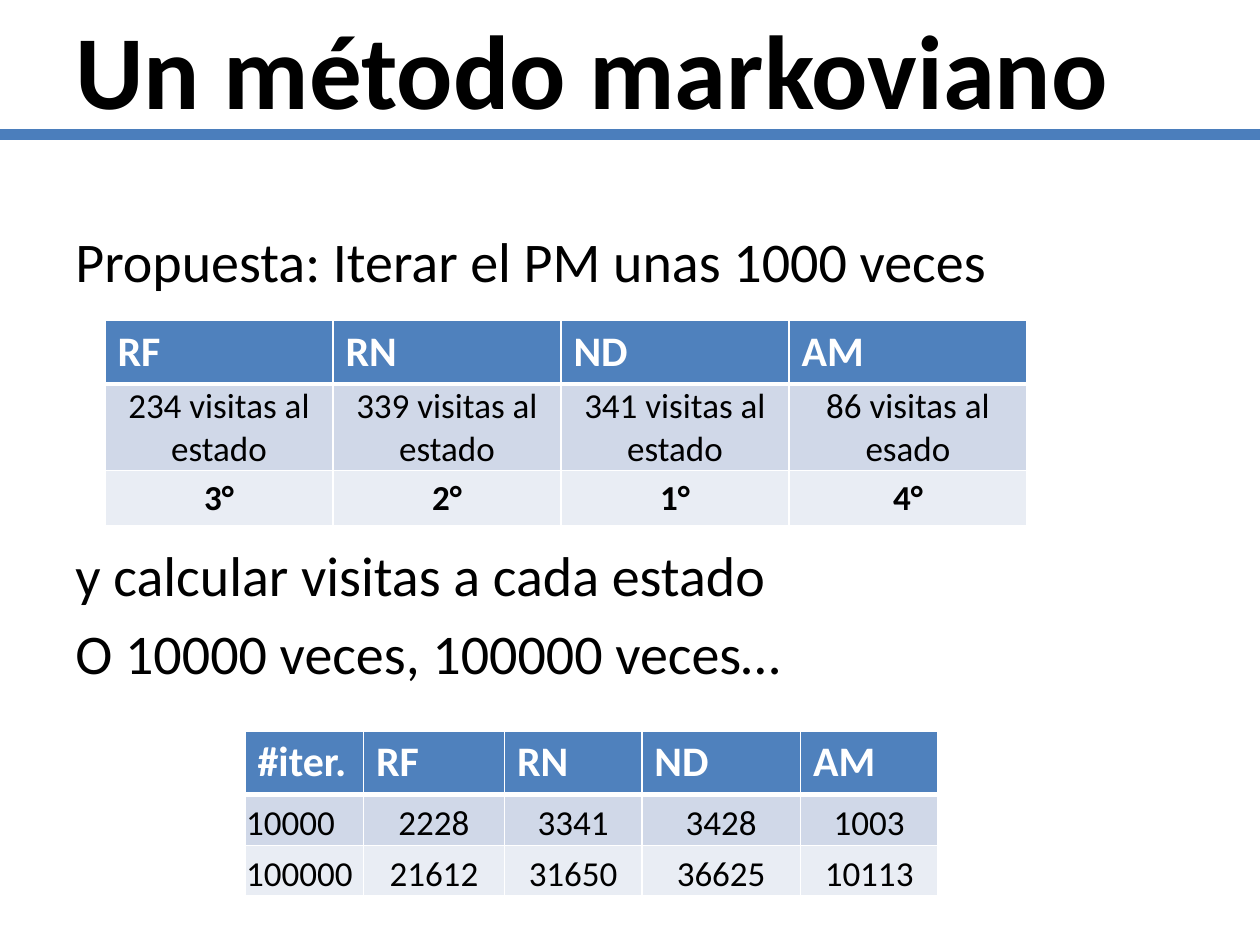
from lxml import etree
from pptx import Presentation
from pptx import util as u
from pptx.dml import color
from pptx.enum import shapes, text
from pptx.oxml import ns

Pt = u.Pt
LEFT, CENTER = text.PP_ALIGN.LEFT, text.PP_ALIGN.CENTER
TOP, MIDDLE, BOTTOM = text.MSO_ANCHOR.TOP, text.MSO_ANCHOR.MIDDLE, text.MSO_ANCHOR.BOTTOM
WIDE, TIGHT = (7.2, 3.6, 7.2, 3.6), (0.72, 0.72, 0.72, 0)


def rgb(code):
    return color.RGBColor.from_string(code)


def write(p, words, size=20, ink="000000", bold=False, align=LEFT, before=0):
    p.alignment = align
    p.space_before = Pt(before)
    r = p.add_run()
    r.text = words
    r.font.name = "Calibri"
    r.font.size = Pt(size)
    r.font.bold = bold
    r.font.color.rgb = rgb(ink)


def border(cell, bottom):
    """Draw white cell borders, 1 pt wide except for the bottom one."""
    pr = cell._tc.get_or_add_tcPr()
    for i, (side, width) in enumerate((("L", 1), ("R", 1), ("T", 1), ("B", bottom))):
        ln = etree.Element(ns.qn("a:ln" + side), w=str(Pt(width)))
        fill = etree.SubElement(ln, ns.qn("a:solidFill"))
        etree.SubElement(fill, ns.qn("a:srgbClr"), val="FFFFFF")
        pr.insert(i, ln)


class Deck:
    """Holds the table style and the current slide."""
    head, bands = "4F81BD", ("D0D8E8", "E9EDF4")

    def __init__(self, prs):
        self.s = prs.slides.add_slide(prs.slide_layouts[6])

    def line(self, x1, y1, x2, y2, ink, width):
        c = self.s.shapes.add_connector(
            shapes.MSO_CONNECTOR.STRAIGHT, Pt(x1), Pt(y1), Pt(x2), Pt(y2))
        c.line.color.rgb = rgb(ink)
        c.line.width = Pt(width)
        etree.SubElement(c._element.spPr, ns.qn("a:effectLst"))

    def text(self, x, y, w, h, paragraphs, anchor=TOP, **fmt):
        """Add a box of (words, space before) paragraphs."""
        tf = self.s.shapes.add_textbox(Pt(x), Pt(y), Pt(w), Pt(h)).text_frame
        tf.word_wrap = True
        tf.vertical_anchor = anchor
        for i, (words, before) in enumerate(paragraphs):
            p = tf.add_paragraph() if i else tf.paragraphs[0]
            write(p, words, before=before, **fmt)

    def cell(self, cell, words, fill, margins=WIDE, anchor=TOP, bottom=1, **fmt):
        cell.fill.solid()
        cell.fill.fore_color.rgb = rgb(fill)
        (cell.margin_left, cell.margin_top,
         cell.margin_right, cell.margin_bottom) = map(Pt, margins)
        cell.vertical_anchor = anchor
        border(cell, bottom)
        write(cell.text_frame.paragraphs[0], words, **fmt)

    def table(self, x, y, widths, heights, header, rows, labels=False, ranks=False):
        """Add a banded table; labels: first column to the left; ranks: bold last row."""
        t = self.s.shapes.add_table(len(heights), len(widths), Pt(x), Pt(y),
                                    Pt(sum(widths)), Pt(sum(heights))).table
        for col, w in zip(t.columns, widths):
            col.width = Pt(w)
        for row, h in zip(t.rows, heights):
            row.height = Pt(h)
        for j, words in enumerate(header):
            self.cell(t.cell(0, j), words, self.head, bottom=3,
                      size=24, ink="FFFFFF", bold=True)
        for i, row in enumerate(rows):
            rank = ranks and i == len(rows) - 1
            place = {} if rank else {"margins": TIGHT, "anchor": BOTTOM}
            for j, words in enumerate(row):
                self.cell(t.cell(i + 1, j), words, self.bands[i % 2], bold=rank,
                          align=LEFT if labels and j == 0 else CENTER, **place)


def main():
    prs = Presentation()
    prs.slide_width, prs.slide_height = Pt(720), Pt(540)
    deck = Deck(prs)
    states = ["RF", "RN", "ND", "AM"]

    deck.line(0, 77, 720, 77, "4B7EBC", 6)
    deck.text(36, 126, 648, 356, [
        ("Propuesta: Iterar el PM unas 1000 veces", 0),
        ("y calcular visitas a cada estado", 141),
        ("O 10000 veces, 100000 veces…", 6),
    ], size=32)
    deck.table(60, 183, [130.3] * 3 + [136], [36.5, 49.5, 31.5], states, [
        ["234 visitas al estado", "339 visitas al estado",
         "341 visitas al estado", "86 visitas al esado"],
        ["3°", "2°", "1°", "4°"],
    ], ranks=True)
    deck.text(36, 0, 648, 77, [("Un método markoviano", 0)],
              anchor=MIDDLE, size=60, bold=True)
    deck.table(140, 417.6, [67.7, 80.6, 78.5, 90.7, 78.5], [36.5, 29, 29],
               ["#iter."] + states, [
        ["10000", "2228", "3341", "3428", "1003"],
        ["100000", "21612", "31650", "36625", "10113"],
    ], labels=True)
    prs.save("out.pptx")


if __name__ == "__main__":
    main()
